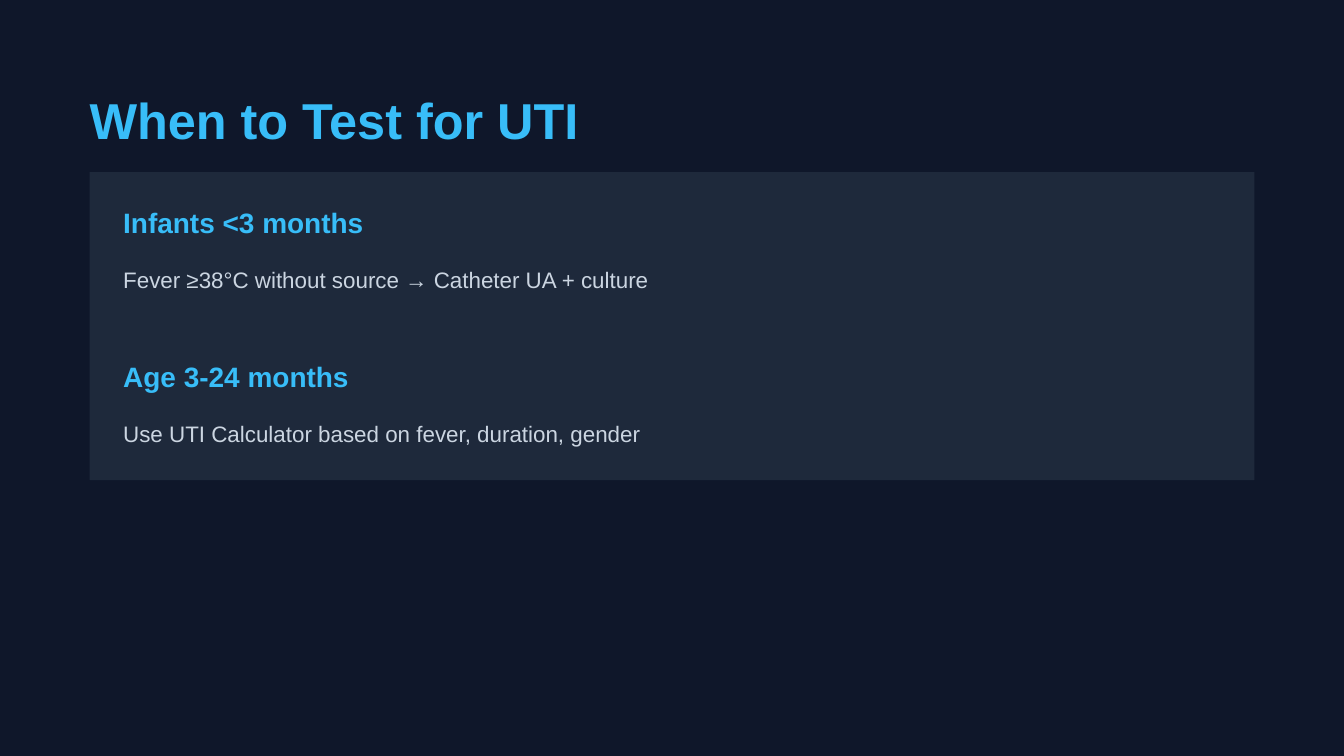
from pptx import Presentation
from pptx.dml.color import RGBColor
from pptx.enum.shapes import MSO_SHAPE
from pptx.enum.text import MSO_ANCHOR, MSO_AUTO_SIZE, PP_ALIGN
from pptx.util import Pt

PX = 9525
COLORS = {"back": "0F172A", "card": "1E293B", "head": "38BDF8", "body": "CBD5E1"}
CARDS = [
    ("Infants <3 months", "Fever ≥38°C without source → Catheter UA + culture"),
    ("Age 3-24 months", "Use UTI Calculator based on fever, duration, gender"),
]


def scale(*box):
    return [n * PX for n in box]


def paint(fill, name):
    fill.solid()
    fill.fore_color.rgb = RGBColor.from_string(COLORS[name])


def write(frame, text, size, lead, color, bold=False):
    frame.margin_left = frame.margin_top = 0
    frame.margin_right = frame.margin_bottom = 0
    frame.word_wrap = True
    frame.auto_size = MSO_AUTO_SIZE.NONE
    frame.vertical_anchor = MSO_ANCHOR.TOP
    para = frame.paragraphs[0]
    para.alignment = PP_ALIGN.LEFT
    para.line_spacing = Pt(lead)
    run = para.add_run()
    run.text = text
    run.font.name = "Arial"
    run.font.size = Pt(size)
    run.font.bold = bold
    run.font.color.rgb = RGBColor.from_string(COLORS[color])


def add_title(slide, x, y, w, h):
    title = slide.shapes.title
    title.left, title.top, title.width, title.height = scale(x, y, w, h)
    write(title.text_frame, "When to Test for UTI", 27, 32.4, "head", True)


def add_card(slide, x, y, w, h, head, body):
    pad = 24
    card = slide.shapes.add_shape(MSO_SHAPE.RECTANGLE, *scale(x, y, w, h))
    card.shadow.inherit = False
    paint(card.fill, "card")
    card.line.fill.background()
    wide = w - 32
    top = slide.shapes.add_textbox(*scale(x + pad, y + pad, wide, 24))
    write(top.text_frame, head, 15, 18, "head", True)
    low = slide.shapes.add_textbox(*scale(x + pad, y + 64, wide, 22))
    write(low.text_frame, body, 12, 16.8, "body")


def main():
    deck = Presentation()
    deck.slide_width, deck.slide_height = scale(960, 540)
    slide = deck.slides.add_slide(deck.slide_layouts[5])
    paint(slide.background.fill, "back")
    add_title(slide, 64, 64, 849, 43)
    high = 110
    for i, (head, body) in enumerate(CARDS):
        add_card(slide, 64, 123 + i * high, 832, high, head, body)
    deck.save("out.pptx")


if __name__ == "__main__":
    main()
